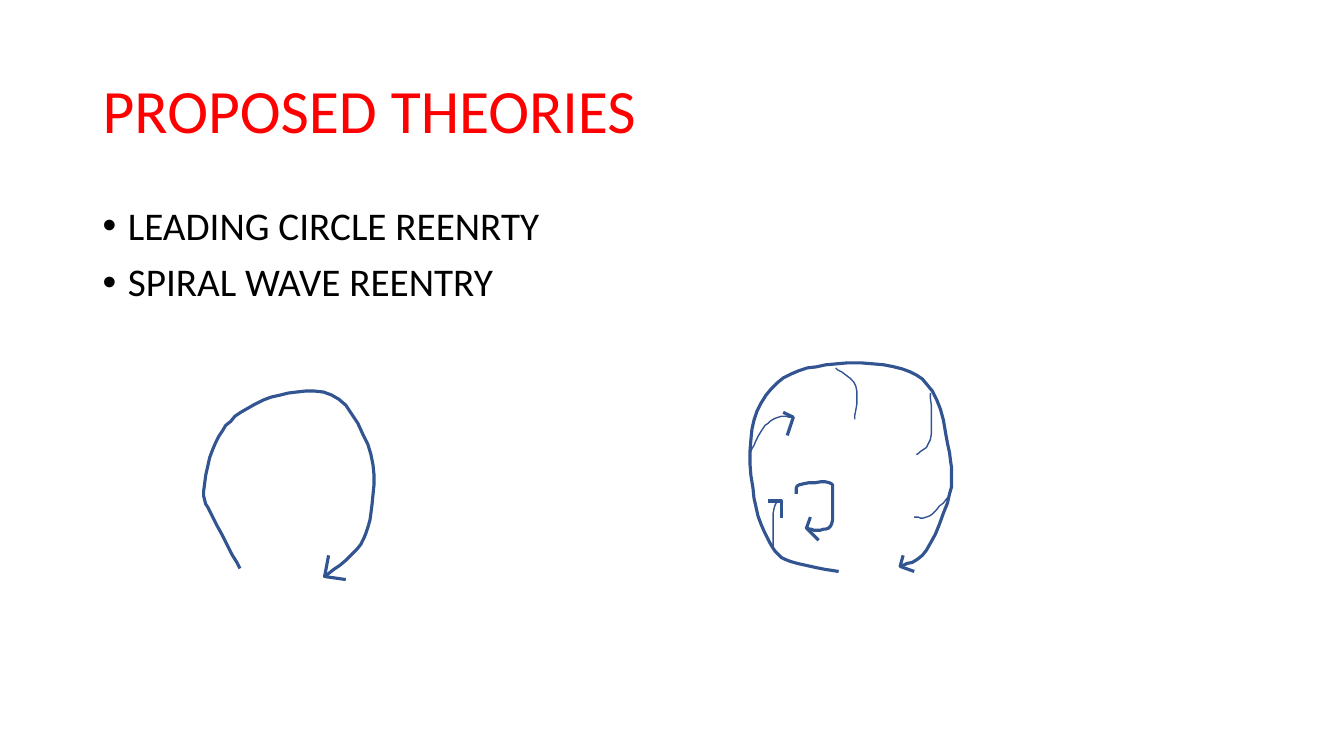
from typing import NamedTuple
from lxml import etree
from pptx import Presentation
from pptx import util as u
from pptx.dml.color import RGBColor
from pptx.enum import text
from pptx.oxml.ns import qn

PX = 9144
STEPS = 6
THEME = {
    "font": "Calibri", "title": 44, "body": 28, "mark": "Arial",
    "red": RGBColor(255, 0, 0), "black": RGBColor(0, 0, 0),
    "ink": RGBColor(0x32, 0x54, 0x91), "bold": 2.25, "thin": 1,
}


class Wave(NamedTuple):
    width: float
    knots: list
    barbs: tuple = ()


deck = Presentation()
deck.slide_width, deck.slide_height = u.Inches(13.333), u.Inches(7.5)
slide = deck.slides.add_slide(deck.slide_layouts[6])


def write(lines, box, size, color, anchor=text.MSO_ANCHOR.TOP, bullet=None, before=0):
    frame = slide.shapes.add_textbox(*[n * PX for n in box]).text_frame
    frame.word_wrap = True
    frame.vertical_anchor = anchor
    frame.text = "\n".join(lines)
    for para in frame.paragraphs:
        para.line_spacing = 0.9
        para.space_before = u.Pt(before)
        font = para.font
        font.name, font.size = THEME["font"], u.Pt(size)
        font.color.rgb = color
        if bullet:
            props = para._p.get_or_add_pPr()
            props.set("marL", str(25 * PX))
            props.set("indent", str(-25 * PX))
            for tag, key, value in [("a:buFont", "typeface", THEME["mark"]),
                                    ("a:buChar", "char", bullet)]:
                mark = etree.Element(qn(tag), {key: value})
                props.insert_element_before(mark, "a:tabLst", "a:defRPr", "a:extLst")


def sketch(knots, width, steps=STEPS):
    ends = [knots[0], *knots, knots[-1]]
    points = [knots[0]]
    for quad in zip(ends, ends[1:], ends[2:], ends[3:]):
        for step in range(1, steps + 1):
            t = step / steps
            points.append([
                round(b + t * (c - a) / 2 + t**2 * (2 * a - 5 * b + 4 * c - d) / 2
                      + t**3 * (3 * b - a - 3 * c + d) / 2)
                for a, b, c, d in zip(*quad)])
    pen = slide.shapes.build_freeform(*points[0], scale=PX)
    pen.add_line_segments(points[1:], close=False)
    curve = pen.convert_to_shape()
    curve.shadow.inherit = False
    curve.fill.background()
    curve.line.color.rgb = THEME["ink"]
    curve.line.width = u.Pt(width)


write(["PROPOSED THEORIES"], (92, 40, 1150, 145), THEME["title"], THEME["red"],
      anchor=text.MSO_ANCHOR.MIDDLE)
write(["LEADING CIRCLE REENRTY", "SPIRAL WAVE REENTRY"], (92, 200, 1150, 476),
      THEME["body"], THEME["black"], bullet="•", before=10)

waves = {
    "leading circle": Wave(
        THEME["bold"],
        [(238, 564), (211, 513), (202, 487), (214, 439), (239, 409), (286, 390),
         (336, 396), (368, 451), (368, 509), (354, 545), (322, 572)],
        barbs=((4, -21), (21, 3))),
    "spiral rim": Wave(
        THEME["bold"],
        [(832, 567), (784, 557), (764, 539), (748, 494), (746, 426), (771, 380),
         (819, 362), (887, 364), (925, 388), (942, 449), (942, 490), (919, 546),
         (893, 562)],
        barbs=((3, -11), (14, 5))),
    "spiral core": Wave(
        THEME["bold"],
        [(790, 490), (793, 481), (823, 479), (826, 490), (825, 520), (812, 526),
         (800, 524)],
        barbs=((4, -11), (12, 12))),
    "lower left arm": Wave(
        THEME["thin"], [(767, 542), (768, 504), (775, 497)],
        barbs=((-13, 0), (0, 17))),
    "upper left arm": Wave(
        THEME["thin"], [(745, 448), (757, 425), (772, 414), (787, 414)],
        barbs=((-10, -5), (-6, 18))),
    "top arm": Wave(THEME["thin"], [(829, 365), (849, 383), (848, 416)]),
    "upper right arm": Wave(THEME["thin"], [(923, 390), (923, 436), (909, 451)]),
    "lower right arm": Wave(THEME["thin"], [(941, 493), (922, 512), (907, 513)]),
}

for wave in waves.values():
    sketch(wave.knots, wave.width)
    if wave.barbs:
        x, y = wave.knots[-1]
        near, far = [(x + dx, y + dy) for dx, dy in wave.barbs]
        sketch([near, (x, y), far], THEME["bold"], steps=1)

deck.save("out.pptx")
